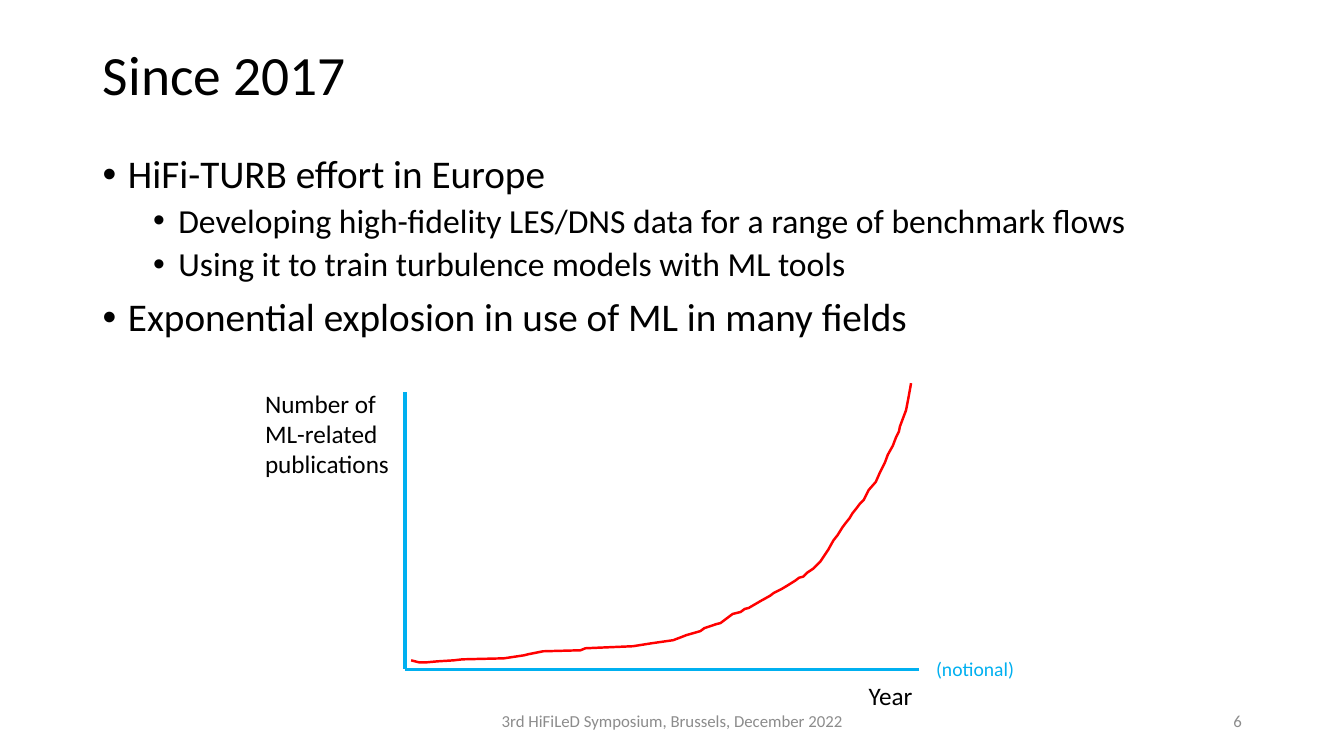
import pptx
import pptx.util
import pptx.dml.color
import pptx.enum.shapes
import pptx.enum.text
import lxml.etree

Cm, Pt = pptx.util.Cm, pptx.util.Pt
ALIGN = pptx.enum.text.PP_ALIGN
ANCHOR = pptx.enum.text.MSO_ANCHOR
FIT = pptx.enum.text.MSO_AUTO_SIZE

# Content
COLORS = {"text": "000000", "footer": "8C8C8C", "axis": "00B0F0", "curve": "FF0000"}
TITLE = "Since 2017"
BULLETS = [  # level, text
    (0, "HiFi-TURB effort in Europe"),
    (1, "Developing high-fidelity LES/DNS data for a range of benchmark flows"),
    (1, "Using it to train turbulence models with ML tools"),
    (0, "Exponential explosion in use of ML in many fields"),
]
LEVELS = [  # size, space before, left margin in cm
    (28, 10, 0.635),
    (24, 5, 1.905),
]
FOOTERS = [  # text, box in cm, alignment
    ("3rd HiFiLeD Symposium, Brussels, December 2022", (11.23, 17.65, 11.43, 1.02), ALIGN.CENTER),
    ("6", (23.93, 17.65, 7.62, 1.02), ALIGN.RIGHT),
]
LABELS = [  # lines, box in cm, size, color
    (["Number of", "ML-related", "publications"], (6.43, 9.65, 3.68, 2.57), 18, "text"),
    (["Year"], (21.64, 17.02, 1.63, 1.02), 18, "text"),
    (["(notional)"], (23.34, 16.43, 2.51, 0.86), 14, "axis"),
]
ORIGIN = (10.21, 16.87)
AXIS_ENDS = [(10.21, 9.88), (23.16, 16.87)]
CURVE_UNIT = Cm(2.54) / 100
CURVE = [  # distance right of and above the origin, in curve units
    (6, 9), (14, 7), (21, 7), (32, 8), (48, 9), (57, 10), (98, 11), (118, 14),
    (122, 15), (137, 18), (174, 19), (179, 21), (226, 23), (245, 26), (266, 29),
    (274, 32), (279, 34), (293, 38), (297, 41), (309, 45), (313, 46), (321, 52),
    (325, 55), (333, 57), (337, 60), (341, 61), (353, 68), (362, 73), (366, 76),
    (374, 80), (379, 83), (387, 88), (391, 91), (395, 92), (399, 96), (405, 100),
    (412, 107), (420, 119), (425, 128), (429, 133), (434, 141), (437, 145),
    (441, 150), (444, 155), (448, 160), (451, 164), (455, 168), (460, 178),
    (467, 186), (471, 195), (476, 205), (479, 213), (484, 222), (487, 230),
    (490, 236), (491, 241), (494, 249), (497, 257), (499, 267), (501, 278), (502, 284),
]


def color(name):
    return pptx.dml.color.RGBColor.from_string(COLORS[name])


def style(para, size, name):
    para.font.name = "Calibri"
    para.font.size = Pt(size)
    para.font.color.rgb = color(name)


def add_text(page, lines, box, size, name, wrap=True):
    frame = page.shapes.add_textbox(*map(Cm, box)).text_frame
    frame.word_wrap = wrap
    frame.auto_size = FIT.NONE if wrap else FIT.SHAPE_TO_FIT_TEXT
    frame.text = "\n".join(lines)
    for para in frame.paragraphs:
        style(para, size, name)
    return frame


def add_bullet(para, margin):
    props = para._p.get_or_add_pPr()
    props.set("marL", str(Cm(margin)))
    props.set("indent", str(-Cm(0.635)))
    for tag, key, value in (("a:buFont", "typeface", "Arial"), ("a:buChar", "char", "•")):
        lxml.etree.SubElement(props, pptx.oxml.ns.qn(tag)).set(key, value)


def add_title(page):
    title = page.shapes.title
    title.left, title.top, title.width, title.height = map(Cm, (2.34, 1.02, 29.21, 1.88))
    frame = title.text_frame
    frame.text = TITLE
    frame.auto_size = FIT.NONE
    frame.vertical_anchor = ANCHOR.MIDDLE
    para = frame.paragraphs[0]
    para.alignment = ALIGN.LEFT
    para.line_spacing = 0.9
    style(para, 39.6, "text")


def add_body(page):
    frame = add_text(page, [text for _, text in BULLETS], (2.34, 3.78, 29.21, 13.39), 28, "text")
    for para, (level, _) in zip(frame.paragraphs, BULLETS):
        size, before, margin = LEVELS[level]
        para.level = level
        para.font.size = Pt(size)
        para.line_spacing = 0.9
        para.space_before = Pt(before)
        add_bullet(para, margin)


def add_graph(page):
    # Axes
    for end in AXIS_ENDS:
        axis = page.shapes.add_connector(
            pptx.enum.shapes.MSO_CONNECTOR.STRAIGHT, *map(Cm, end + ORIGIN))
        axis.line.color.rgb = color("axis")
        axis.line.width = Pt(2.5)
        lxml.etree.SubElement(axis._element.spPr, pptx.oxml.ns.qn("a:effectLst"))
    # Growth curve
    points = [(right, -up) for right, up in CURVE]
    builder = page.shapes.build_freeform(*points[0], scale=CURVE_UNIT)
    builder.add_line_segments(points[1:], close=False)
    curve = builder.convert_to_shape(*map(Cm, ORIGIN))
    curve.shadow.inherit = False
    curve.fill.background()
    curve.line.color.rgb = color("curve")
    curve.line.width = Pt(1.75)
    # Labels
    for lines, box, size, name in LABELS:
        add_text(page, lines, box, size, name, wrap=False)


def main():
    deck = pptx.Presentation()
    deck.slide_width, deck.slide_height = Cm(33.87), Cm(19.05)
    page = deck.slides.add_slide(deck.slide_layouts.get_by_name("Title Only"))
    add_title(page)
    add_body(page)
    for text, box, alignment in FOOTERS:
        frame = add_text(page, [text], box, 12, "footer")
        frame.vertical_anchor = ANCHOR.MIDDLE
        frame.paragraphs[0].alignment = alignment
    add_graph(page)
    deck.save("out.pptx")


if __name__ == "__main__":
    main()
